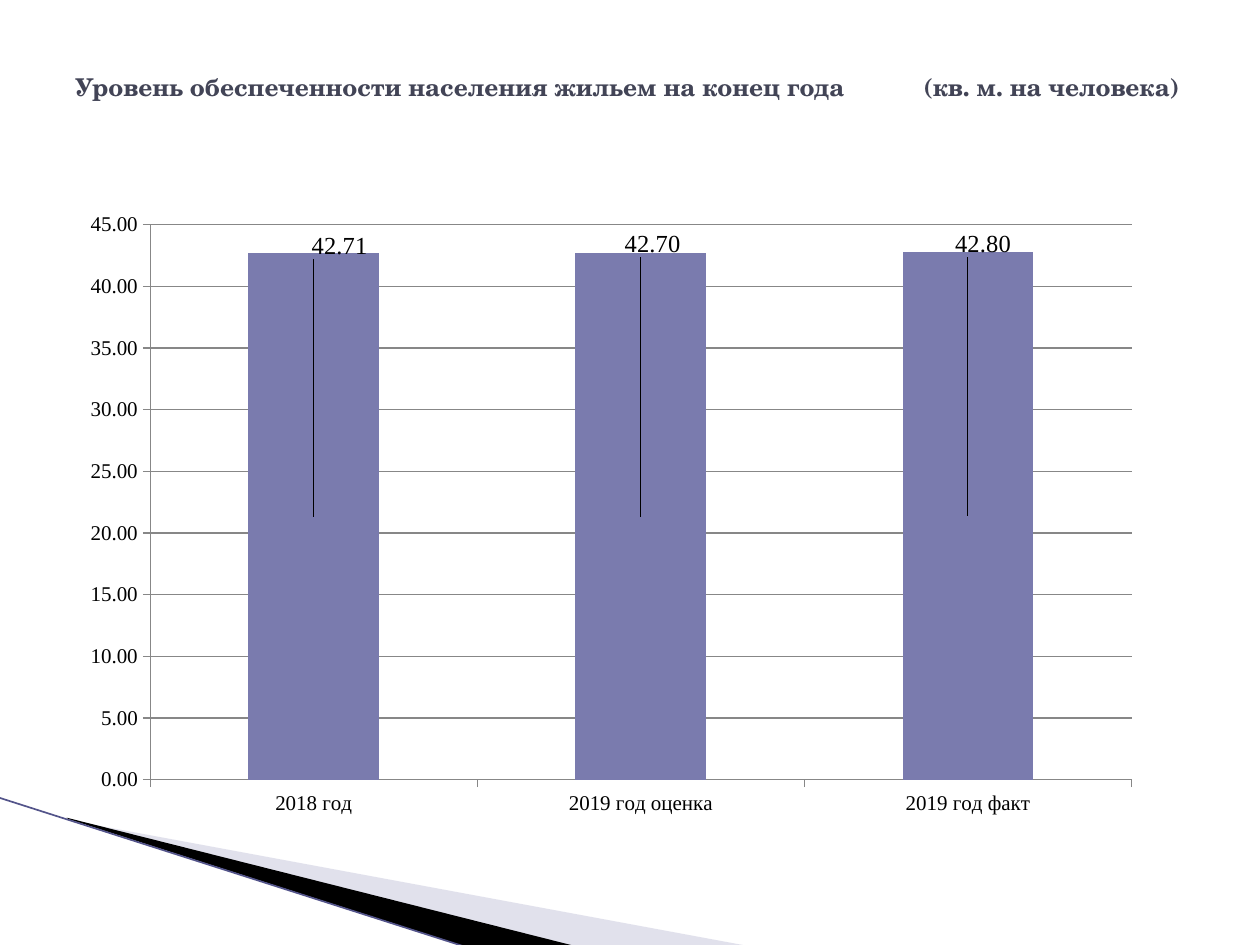
from lxml import etree
from pptx import Presentation
from pptx.chart.data import CategoryChartData
from pptx.dml.color import RGBColor
from pptx.enum import chart as c, shapes, text
from pptx.oxml import parse_xml
from pptx.oxml.ns import nsdecls, qn
from pptx.util import Inches, Pt

LAVENDER = RGBColor(0xB6, 0xB6, 0xD1)
BLACK = RGBColor(0, 0, 0)
INDIGO = RGBColor(0x53, 0x54, 0x8A)
BAR = RGBColor(0x7A, 0x7B, 0xAE)
GREY = RGBColor(0x87, 0x87, 0x87)
TITLE = RGBColor(0x42, 0x44, 0x56)
SERIF = "Times New Roman"


def set_font(font, name, size, color):
    font.name = name
    font.size = Pt(size)
    font.color.rgb = color


deck = Presentation()
deck.slide_width, deck.slide_height = Inches(10), Inches(7.5)
page = deck.slides.add_slide(deck.slide_layouts[6])

# Corner wedges
wedges = [
    ([(0.55, 6.51), (5.95, 7.51), (4.56, 7.51), (0.55, 6.5)], LAVENDER, 40),
    ([(0.53, 6.49), (4.57, 7.51), (3.72, 7.52), (0.54, 6.5)], BLACK, 100),
]
for points, color, opacity in wedges:
    corners = [(Inches(x), Inches(y)) for x, y in points]
    builder = page.shapes.build_freeform(*corners[0])
    builder.add_line_segments(corners[1:], close=True)
    wedge = builder.convert_to_shape()
    wedge.shadow.inherit = False
    wedge.fill.solid()
    wedge.fill.fore_color.rgb = color
    wedge.line.fill.background()
    if opacity < 100:
        fill_color = wedge.element.spPr.find(qn("a:solidFill"))[0]
        etree.SubElement(fill_color, qn("a:alpha"), val=str(opacity * 1000))

edge = page.shapes.add_connector(
    shapes.MSO_CONNECTOR.STRAIGHT,
    Inches(-0.01), Inches(6.33), Inches(3.71), Inches(7.52))
edge.line.color.rgb = INDIGO
edge.line.width = Pt(0.95)
etree.SubElement(edge.element.spPr, qn("a:effectLst"))

# Housing chart
data = CategoryChartData(number_format="#,##0.00")
data.categories = ["2018 год", "2019 год оценка", "2019 год факт"]
data.add_series("Series 1", [42.71, 42.7, 42.8])
chart = page.shapes.add_chart(
    c.XL_CHART_TYPE.COLUMN_STACKED,
    Inches(0.5), Inches(1.62), Inches(8.55), Inches(4.95), data).chart
set_font(chart.font, "DejaVu Sans Mono", 18, BLACK)
chart.has_legend = False
chart.has_title = False

for axis in (chart.category_axis, chart.value_axis):
    set_font(axis.tick_labels.font, SERIF, 12, BLACK)
    axis.major_tick_mark = c.XL_TICK_MARK.OUTSIDE
    axis.minor_tick_mark = c.XL_TICK_MARK.NONE
    axis.format.line.color.rgb = GREY
    axis.format.line.width = Pt(0.75)
values = chart.value_axis
values.minimum_scale, values.maximum_scale, values.major_unit = 0, 45, 5
values.tick_labels.number_format = "#,##0.00"
values.tick_labels.number_format_is_linked = False
values.has_major_gridlines = True
values.major_gridlines.format.line.color.rgb = GREY
values.major_gridlines.format.line.width = Pt(0.75)

plot = chart.plots[0]
plot.gap_width, plot.overlap = 150, 100
plot.vary_by_categories = False
series = plot.series[0]
series.format.fill.solid()
series.format.fill.fore_color.rgb = BAR
labels = series.data_labels
labels.show_value = True
labels.number_format = "#,##0.00"
labels.number_format_is_linked = False
set_font(labels.font, SERIF, 14, BLACK)

# Labels are moved from the middle of each column to its top
offsets = [(0.024, -0.434), (0.011, -0.437), (0.014, -0.436)]
for index in range(len(offsets)):
    label = series.points[index].data_label
    set_font(label.font, SERIF, 14, BLACK)
    label.position = c.XL_LABEL_POSITION.CENTER
for node, (x, y) in zip(chart.element.xpath(".//c:dLbl"), offsets):
    layout = parse_xml(
        f'<c:layout {nsdecls("c")}><c:manualLayout>'
        f'<c:x val="{x}"/><c:y val="{y}"/></c:manualLayout></c:layout>')
    number_format = parse_xml(
        f'<c:numFmt {nsdecls("c")} formatCode="#,##0.00" sourceLinked="0"/>')
    node.insert(1, layout)
    node.insert(2, number_format)

plot_area = chart.element.xpath(".//c:plotArea")[0]
for old_layout in plot_area.findall(qn("c:layout")):
    plot_area.remove(old_layout)
plot_area.insert(0, parse_xml(
    f'<c:layout {nsdecls("c")}><c:manualLayout><c:layoutTarget val="inner"/>'
    '<c:xMode val="edge"/><c:yMode val="edge"/><c:x val="0.081"/>'
    '<c:y val="0.033"/><c:w val="0.911"/><c:h val="0.89"/>'
    '</c:manualLayout></c:layout>'))

# Title, with the unit set off by a tab stop
box = page.shapes.add_textbox(Inches(0.5), Inches(0.3), Inches(9), Inches(0.77))
box.text_frame.word_wrap = True
box.text_frame.vertical_anchor = text.MSO_ANCHOR.MIDDLE
para = box.text_frame.paragraphs[0]
para.text = "Уровень обеспеченности населения жильем на конец года\t(кв. м. на человека)"
tabs = etree.SubElement(para._p.get_or_add_pPr(), qn("a:tabLst"))
etree.SubElement(tabs, qn("a:tab"), pos=str(Inches(6.73)), algn="l")
for span in para.runs:
    set_font(span.font, "TeX Gyre Schola", 14, TITLE)
    span.font.bold = True

deck.save("out.pptx")
